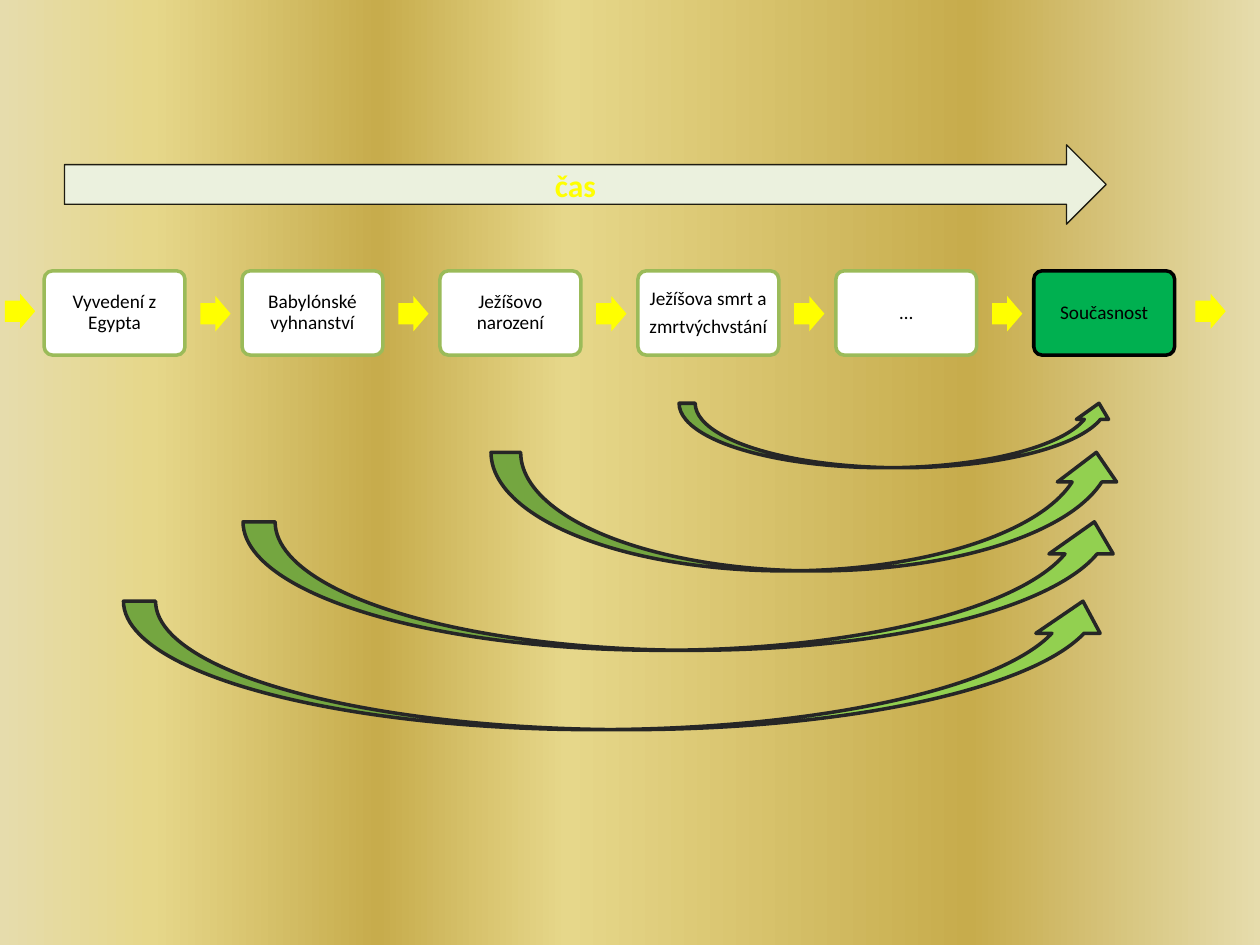
from dataclasses import dataclass
from typing import Optional

from lxml import etree
from pptx import Presentation
from pptx import util as u
from pptx.dml.color import RGBColor
from pptx.enum import shapes, text
from pptx.oxml.ns import qn

COLORS = {
    "white": "FFFFFF", "black": "000000", "yellow": "FFFF00",
    "olive": "9BBB59", "green": "00B050", "lime": "92D050",
    "charcoal": "262626", "pale": "EBF1DE", "umber": "1E1C11",
    "sand": "E6DCAC", "straw": "E6D78A", "gold": "C7AC4C",
}
FONT = "Calibri"
BACKGROUND_STOPS = [(0, "sand"), (12, "straw"), (30, "gold"),
                    (45, "straw"), (77, "gold"), (100, "sand")]
# Timeline row, in centimetres
FIRST_LEFT, PITCH, ROW_TOP = 0.89, 3.99, 5.46
STEP_WIDTH, STEP_HEIGHT = 2.84, 1.7
STEP_ARROW_OFFSET, STEP_ARROW_TOP = 3.15, 5.97
EDGE_ARROW_TOP = 5.92
PRESET = shapes.MSO_SHAPE


@dataclass
class Box:
    left: float
    top: float
    width: float
    height: float


@dataclass
class Event:
    label: str
    fill: str = "white"
    line: str = "olive"


EVENTS = [
    Event("Vyvedení z Egypta"),
    Event("Babylónské vyhnanství"),
    Event("Ježíšovo narození"),
    Event("Ježíšova smrt a\nzmrtvýchvstání"),
    Event("…"),
    Event("Současnost", "green", "black"),
]
CURVES = [
    Box(2.49, 12.12, 19.99, 2.59),
    Box(4.9, 10.52, 17.81, 2.59),
    Box(9.9, 9.12, 12.8, 2.39),
    Box(13.69, 8.13, 8.79, 1.3),
]


def rgb(name: str) -> RGBColor:
    return RGBColor.from_string(COLORS[name])


def paint_background(slide) -> None:
    fill = slide.background.fill
    fill.gradient()
    fill.gradient_angle = 0
    stop_list = next(slide.background._cSld.iter(qn("a:gsLst")))
    for stop in list(stop_list):
        stop_list.remove(stop)
    for percent, name in BACKGROUND_STOPS:
        stop = etree.SubElement(stop_list, qn("a:gs"), pos=str(percent * 1000))
        etree.SubElement(stop, qn("a:srgbClr"), val=COLORS[name])


def add_shape(slide, preset, box: Box, fill: str,
              line: Optional[str] = None, line_width: float = 2):
    shape = slide.shapes.add_shape(preset, u.Cm(box.left), u.Cm(box.top),
                                   u.Cm(box.width), u.Cm(box.height))
    shape.shadow.inherit = False
    shape.fill.solid()
    shape.fill.fore_color.rgb = rgb(fill)
    if line:
        shape.line.color.rgb = rgb(line)
        shape.line.width = u.Pt(line_width)
    else:
        shape.line.fill.background()
    return shape


def write_label(shape, label: str, size: int, color: str, bold: bool = False) -> None:
    frame = shape.text_frame
    frame.text = label
    frame.word_wrap = True
    frame.vertical_anchor = text.MSO_ANCHOR.MIDDLE
    for paragraph in frame.paragraphs:
        paragraph.alignment = text.PP_ALIGN.CENTER
        for run in paragraph.runs:
            run.font.name = FONT
            run.font.size = u.Pt(size)
            run.font.bold = bold
            run.font.color.rgb = rgb(color)


def add_event(slide, event: Event, left: float) -> None:
    shape = add_shape(slide, PRESET.ROUNDED_RECTANGLE,
                      Box(left, ROW_TOP, STEP_WIDTH, STEP_HEIGHT),
                      event.fill, event.line)
    shape.adjustments[0] = 0.1
    write_label(shape, event.label, 11, "black")
    frame = shape.text_frame
    frame.margin_left = frame.margin_right = u.Cm(0.12)
    frame.margin_top = frame.margin_bottom = u.Cm(0.12)
    for paragraph in frame.paragraphs:
        paragraph.line_spacing = 0.9
        paragraph.space_after = u.Pt(3.85)


def add_step_arrow(slide, left: float, top: float) -> None:
    arrow = add_shape(slide, PRESET.RIGHT_ARROW, Box(left, top, 0.61, 0.71), "yellow")
    arrow.adjustments[0] = 0.6
    arrow.adjustments[1] = 0.5


def main() -> None:
    presentation = Presentation()
    presentation.slide_width, presentation.slide_height = u.Cm(25.4), u.Cm(19.05)
    slide = presentation.slides.add_slide(presentation.slide_layouts[6])
    paint_background(slide)

    # Events with an arrow between each pair
    for index, event in enumerate(EVENTS):
        left = FIRST_LEFT + index * PITCH
        add_event(slide, event, left)
        if index < len(EVENTS) - 1:
            add_step_arrow(slide, left + STEP_ARROW_OFFSET, STEP_ARROW_TOP)

    # Curved arrows from past events to the present
    for curve in CURVES:
        add_shape(slide, PRESET.CURVED_UP_ARROW, curve, "lime", "charcoal")

    # Time arrow
    time_arrow = add_shape(slide, PRESET.RIGHT_ARROW, Box(1.3, 2.92, 21, 1.6),
                           "pale", "umber", 0.75)
    write_label(time_arrow, "čas", 18, "yellow", bold=True)

    # Arrows at both ends of the timeline
    for left in (0.1, 24.1):
        add_step_arrow(slide, left, EDGE_ARROW_TOP)

    presentation.save("out.pptx")


if __name__ == "__main__":
    main()
